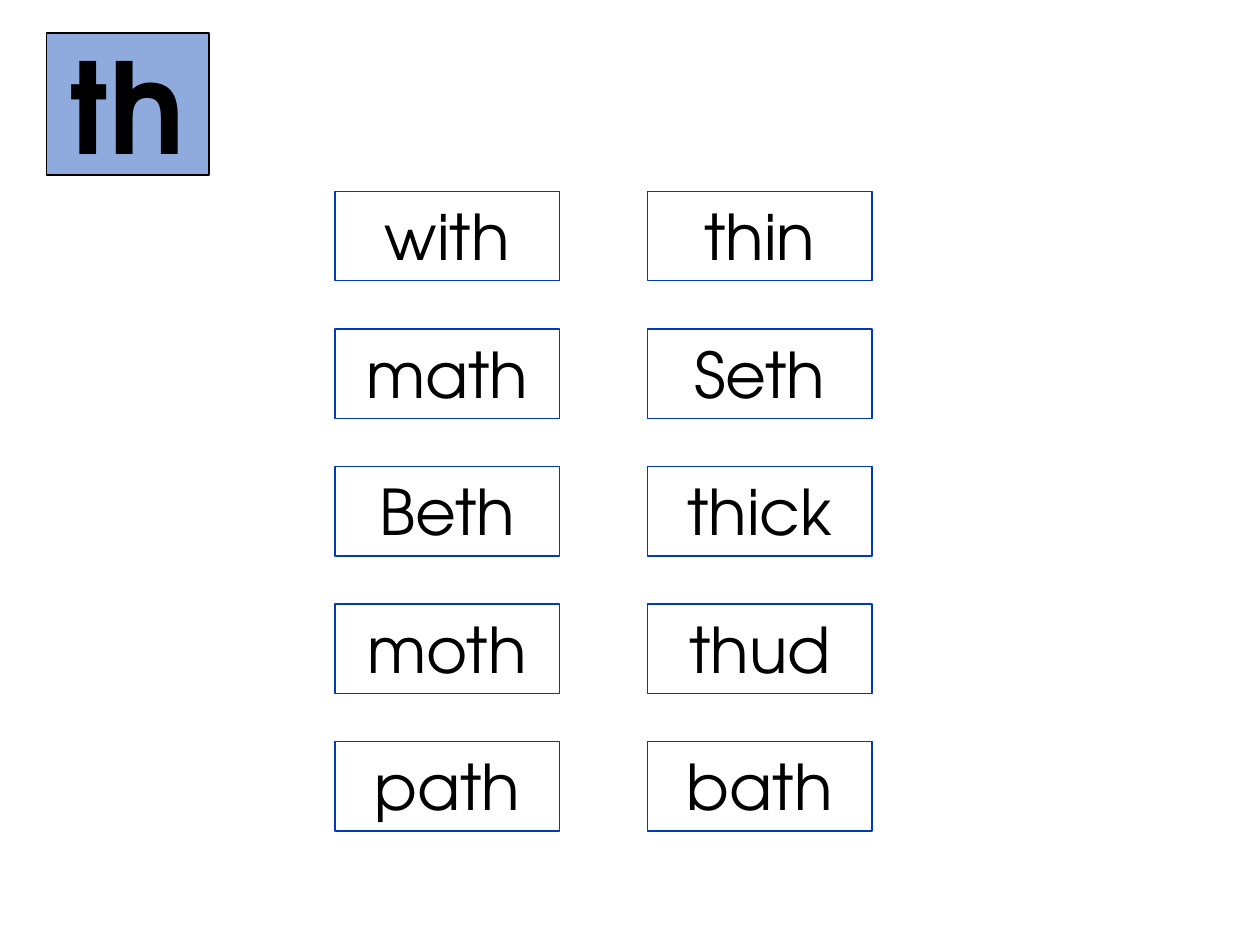
from dataclasses import dataclass
from pptx import Presentation
from pptx.dml.color import RGBColor as RGB
from pptx.enum.shapes import MSO_SHAPE as Shape
from pptx.enum.text import MSO_ANCHOR as Anchor, MSO_AUTO_SIZE as Fit, PP_ALIGN as Align
from pptx.util import Pt


@dataclass(frozen=True)
class Theme:
    font: str = "TeX Gyre Adventor"
    ink: RGB = RGB(0x00, 0x00, 0x00)
    edge: RGB = RGB(0x00, 0x3A, 0xBC)
    badge: RGB = RGB(0x8F, 0xAA, 0xDC)
    word: int = 36
    sound: int = 72


THEME = Theme()

ROWS = [
    ("with", "thin"),
    ("math", "Seth"),
    ("Beth", "thick"),
    ("moth", "thud"),
    ("path", "bath"),
]

# Word grid, in points
LEFT, TOP = 191.5, 109.4
STEP_X, STEP_Y = 178.6, 78.6
WIDE, HIGH = 128.2, 51.1


def add_box(slide, text, left, top, wide, high, size, edge, line):
    """Add an unfilled outlined box with centred text."""
    box = slide.shapes.add_shape(
        Shape.RECTANGLE, Pt(left), Pt(top), Pt(wide), Pt(high))
    box.shadow.inherit = False
    box.fill.background()
    box.line.color.rgb = edge
    box.line.width = Pt(line)
    frame = box.text_frame
    frame.word_wrap = True
    frame.text = text
    para = frame.paragraphs[0]
    para.alignment = Align.CENTER
    font = para.runs[0].font
    font.name = THEME.font
    font.size = Pt(size)
    font.color.rgb = THEME.ink
    return box


def add_word(slide, text, left, top):
    box = add_box(slide, text, left, top, WIDE, HIGH,
                  THEME.word, THEME.edge, 0.75)
    box.text_frame.vertical_anchor = Anchor.TOP
    box.text_frame.auto_size = Fit.SHAPE_TO_FIT_TEXT


def add_badge(slide, text):
    box = add_box(slide, text, 26.6, 18.7, 92.9, 81.4,
                  THEME.sound, THEME.ink, 1)
    box.fill.solid()
    box.fill.fore_color.rgb = THEME.badge
    box.text_frame.vertical_anchor = Anchor.MIDDLE
    box.text_frame.paragraphs[0].runs[0].font.bold = True


def main():
    deck = Presentation()
    deck.slide_width, deck.slide_height = Pt(720), Pt(540)
    slide = deck.slides.add_slide(deck.slide_layouts[6])

    # Words to read
    for row, words in enumerate(ROWS):
        for col, word in enumerate(words):
            add_word(slide, word, LEFT + col * STEP_X, TOP + row * STEP_Y)

    # Sound being taught
    add_badge(slide, "th")

    deck.save("out.pptx")


if __name__ == "__main__":
    main()
